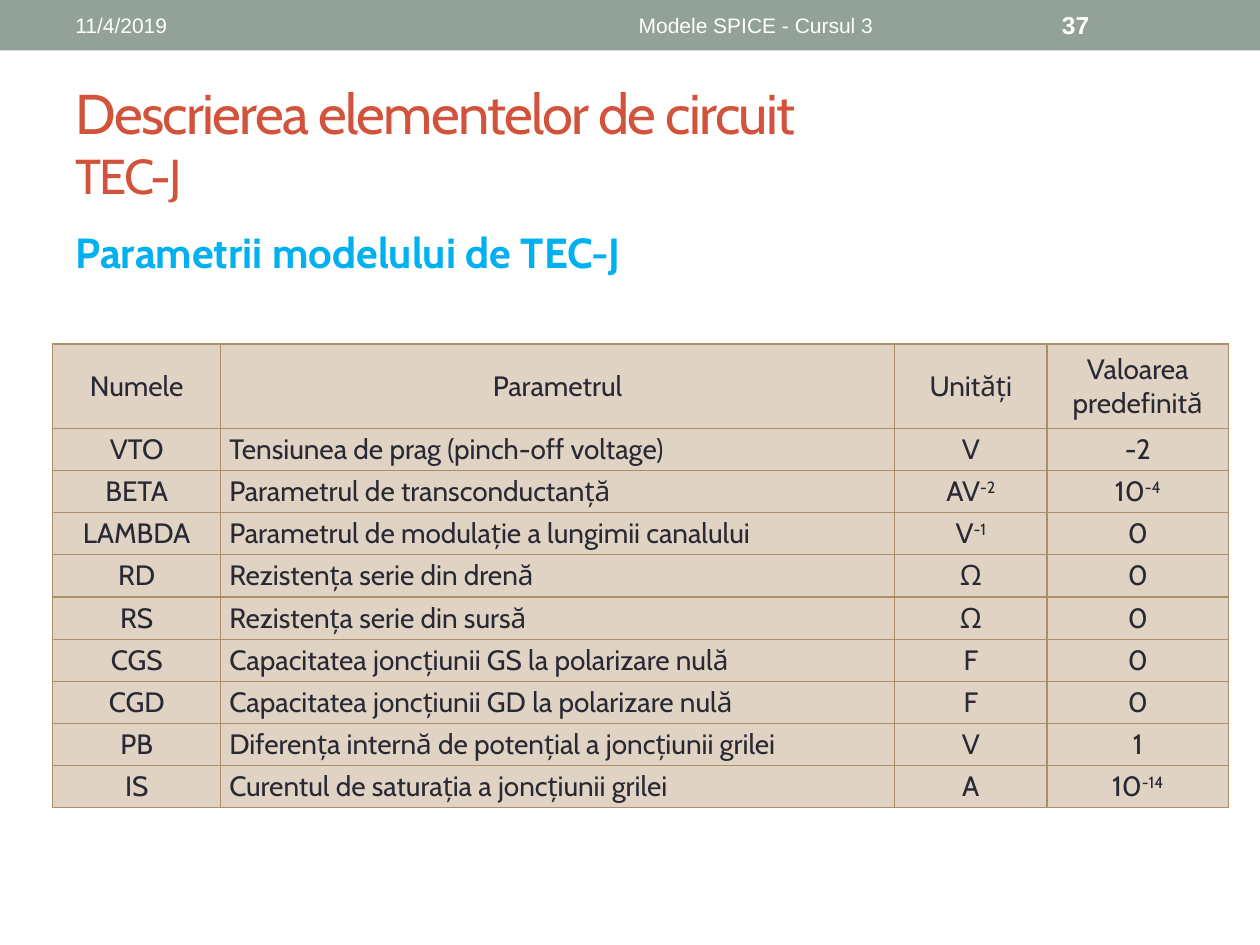
"""Build the slide that lists the JFET model parameters in a table."""
from lxml.etree import SubElement
from pptx import Presentation
from pptx.dml.color import RGBColor
from pptx.enum.shapes import MSO_SHAPE
from pptx.enum.text import MSO_ANCHOR, MSO_AUTO_SIZE, PP_ALIGN
from pptx.oxml.ns import qn
from pptx.util import Inches, Pt

COLORS = {"band": "93A299", "title": "D2533C", "head": "00B0F0", "white": "FFFFFF",
          "cell": "E0D3C3", "line": "AD8F67", "text": "292934"}
ROWS = [
    ("Numele", "Parametrul", "Unități", "Valoarea predefinită"),
    ("VTO", "Tensiunea de prag (pinch-off voltage)", "V", "-2"),
    ("BETA", "Parametrul de transconductanță", "AV^-2", "10^-4"),
    ("LAMBDA", "Parametrul de modulație a lungimii canalului", "V^-1", "0"),
    ("RD", "Rezistența serie din drenă", "Ω", "0"),
    ("RS", "Rezistența serie din sursă", "Ω", "0"),
    ("CGS", "Capacitatea joncțiunii GS la polarizare nulă", "F", "0"),
    ("CGD", "Capacitatea joncțiunii GD la polarizare nulă", "F", "0"),
    ("PB", "Diferența internă de potențial a joncțiunii grilei", "V", "1"),
    ("IS", "Curentul de saturația a joncțiunii grilei", "A", "10^-14"),
]
WIDTHS = [1.33, 5.35, 1.21, 1.44]


def style(para, size, color, name="Cabin", bold=False, align=PP_ALIGN.LEFT):
    para.alignment = align
    font = para.font
    font.name, font.size, font.bold = name, Pt(size), bold
    font.color.rgb = RGBColor.from_string(COLORS[color])


def border(cell):
    props = cell._tc.get_or_add_tcPr()
    for at, side in enumerate(("lnL", "lnR", "lnT", "lnB")):
        line = SubElement(props, qn(f"a:{side}"), w=str(Pt(0.75)))
        fill = SubElement(line, qn("a:solidFill"))
        SubElement(fill, qn("a:srgbClr"), val=COLORS["line"])
        props.insert(at, line)


deck = Presentation()
deck.slide_width, deck.slide_height = Inches(10), Inches(7.5)
slide = deck.slides.add_slide(deck.slide_layouts[1])
shapes = slide.shapes
title, body = slide.placeholders

band = shapes.add_shape(MSO_SHAPE.RECTANGLE, 0, 0, Inches(10), Inches(0.4))
band.shadow.inherit = False
band.fill.solid()
band.fill.fore_color.rgb = RGBColor.from_string(COLORS["band"])
band.line.fill.background()

for holder, top, height in ((title, 0.58, 1.08), (body, 1.75, 0.58)):
    holder.left, holder.top = Inches(0.5), Inches(top)
    holder.width, holder.height = Inches(9), Inches(height)
    holder.text_frame.auto_size = MSO_AUTO_SIZE.NONE

title.text_frame.vertical_anchor = MSO_ANCHOR.MIDDLE
para = title.text_frame.paragraphs[0]
style(para, 32, "title")
for text, size in (("Descrierea elementelor de circuit", 32), ("TEC-J", 28)):
    if para.runs:
        para.add_line_break()
    run = para.add_run()
    run.text = text
    run.font.size = Pt(size)
    run.font._element.set("spc", "-100")

body.text_frame.text = "Parametrii modelului de TEC-J"
para = body.text_frame.paragraphs[0]
props = para._p.get_or_add_pPr()
props.set("marL", str(Inches(0.2)))
props.set("indent", str(Inches(-0.2)))
SubElement(props, qn("a:buNone"))
style(para, 24, "head", bold=True)

for text, left, width, size, bold, align in (
    ("11/4/2019", 0.5, 3.17, 12, False, PP_ALIGN.LEFT),
    ("Modele SPICE - Cursul 3", 3.75, 4.5, 12, False, PP_ALIGN.CENTER),
    ("37", 8.33, 1.17, 14, True, PP_ALIGN.LEFT),
):
    box = shapes.add_textbox(Inches(left), Inches(0.02), Inches(width), Inches(0.36))
    frame = box.text_frame
    frame.word_wrap = True
    frame.vertical_anchor = MSO_ANCHOR.MIDDLE
    frame.text = text
    style(frame.paragraphs[0], size, "white", "Arial", bold, align)

table = shapes.add_table(len(ROWS), len(WIDTHS), Inches(0.42), Inches(2.73),
                         Inches(9.33), Inches(3.69)).table
table.first_row = table.horz_banding = False
for col, width in zip(table.columns, WIDTHS):
    col.width = Inches(width)
for r, texts in enumerate(ROWS):
    table.rows[r].height = Inches(0.335 if r else 0.67)
    for c, text in enumerate(texts):
        cell = table.cell(r, c)
        cell.fill.solid()
        cell.fill.fore_color.rgb = RGBColor.from_string(COLORS["cell"])
        border(cell)
        cell.vertical_anchor = MSO_ANCHOR.MIDDLE
        cell.margin_left = cell.margin_right = Inches(0.07)
        cell.margin_top = cell.margin_bottom = 0
        para = cell.text_frame.paragraphs[0]
        style(para, 16, "text", align=PP_ALIGN.LEFT if r and c == 1 else PP_ALIGN.CENTER)
        for n, part in enumerate(text.split("^")):
            run = para.add_run()
            run.text = part
            if n:
                run.font._element.set("baseline", "30000")

deck.save("out.pptx")
